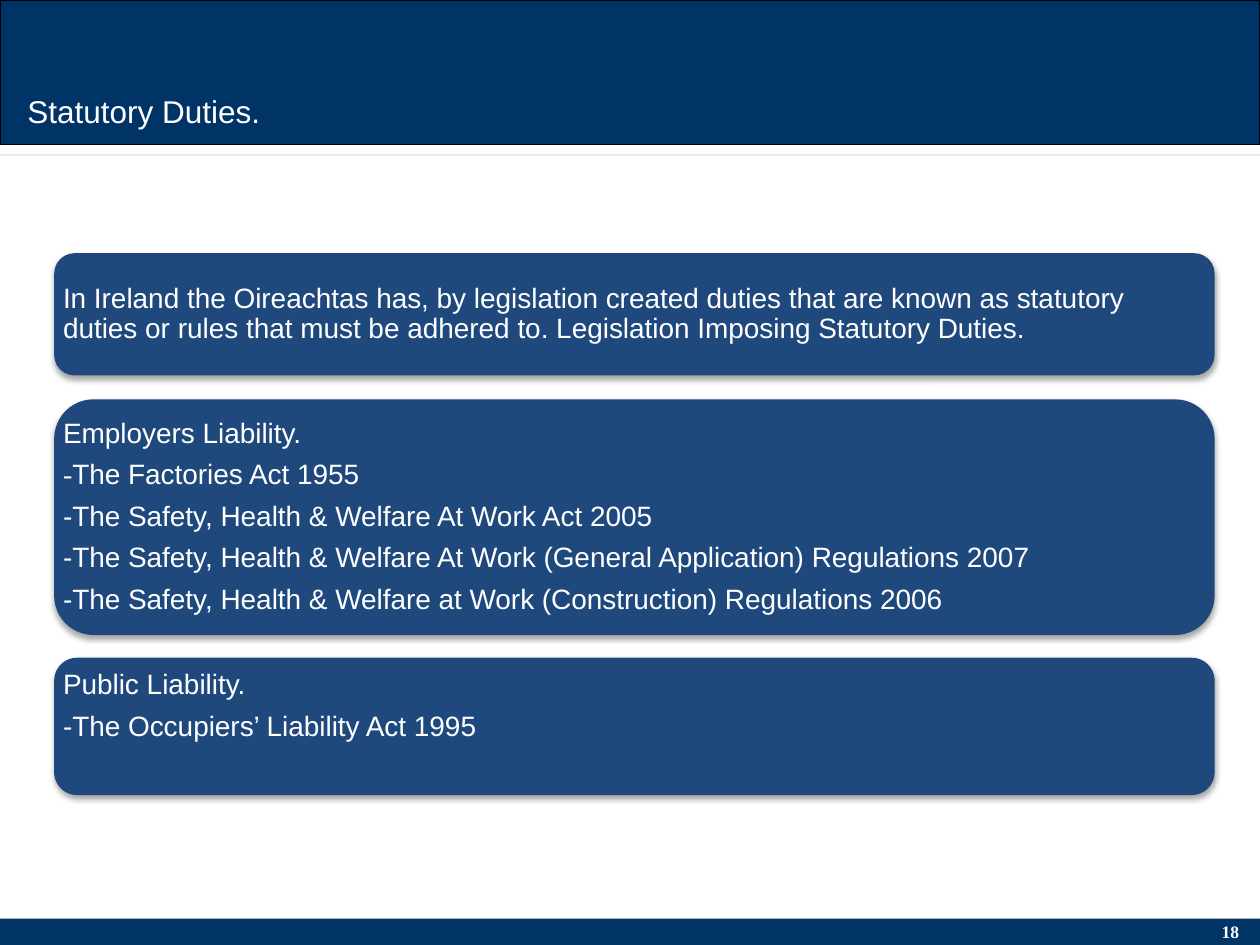
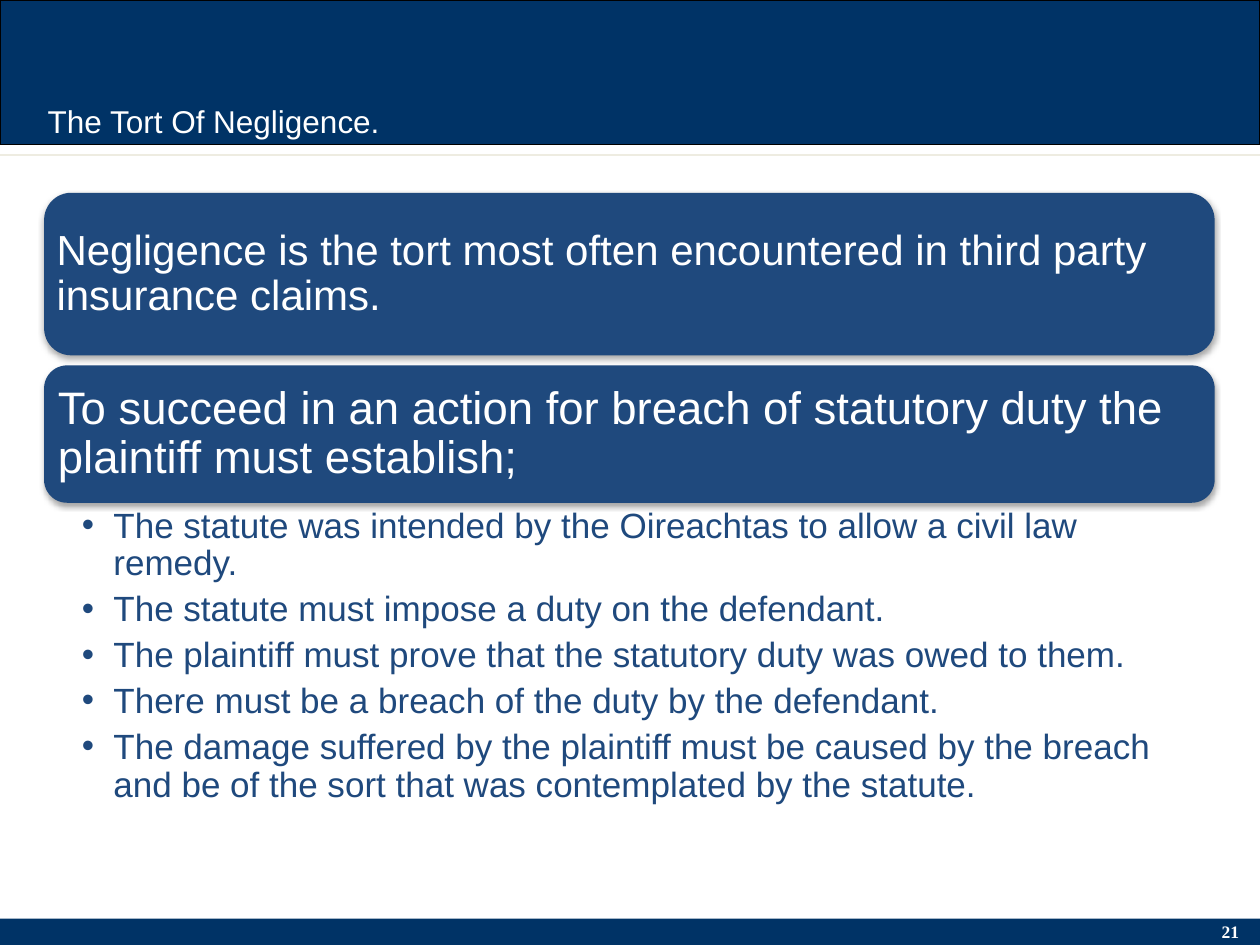
"""Build two slides on statutory duties and the tort of negligence."""
from dataclasses import dataclass

import pptx
import pptx.dml.color
import pptx.enum.shapes
import pptx.enum.text
import pptx.oxml.ns
import pptx.util
from lxml import etree

SLIDE_W, SLIDE_H = pptx.util.Inches(10), pptx.util.Inches(7.5)
COLS, ROWS = 100, 75
NAVY, BLUE, WHITE, BLACK, CREAM = "003366", "1F497D", "FFFFFF", "000000", "EEECE1"
SANS, SERIF = "Arial", "Times New Roman"
SHAPE = pptx.enum.shapes.MSO_SHAPE
ALIGN = pptx.enum.text.PP_ALIGN
ANCHOR = pptx.enum.text.MSO_ANCHOR
qn = pptx.oxml.ns.qn


@dataclass(frozen=True)
class Area:
    """A rectangle in grid columns and rows."""
    col: float
    row: float
    cols: float
    rows: float


@dataclass(frozen=True)
class Run:
    """A piece of text in one font."""
    text: str
    font: str = SANS


@dataclass(frozen=True)
class Style:
    """How the paragraphs of a text box look."""
    size: float
    color: str = WHITE
    bold: bool = False
    align: ALIGN = ALIGN.LEFT
    anchor: ANCHOR = ANCHOR.TOP
    spacing: float = 1.0
    after: float = 0
    indent: float = 0


@dataclass(frozen=True)
class Card:
    """A rounded panel with its text."""
    row: float
    rows: float
    size: float
    inset: float
    lines: tuple[tuple[Run, ...], ...]
    spare: float = 0


TITLE = Style(18)
NUMBER = Style(10, bold=True, align=ALIGN.CENTER)
POINTS = Style(20, BLUE, spacing=0.9, after=4.6, indent=2.5)


def x(cols: float) -> int:
    """Turn grid columns into a length."""
    return round(SLIDE_W * cols / COLS)


def y(rows: float) -> int:
    """Turn grid rows into a length."""
    return round(SLIDE_H * rows / ROWS)


def rgb(value: str) -> pptx.dml.color.RGBColor:
    """Turn a hex string into a colour."""
    return pptx.dml.color.RGBColor.from_string(value)


def place(area: Area) -> tuple[int, int, int, int]:
    """Give left, top, width and height of an area."""
    return x(area.col), y(area.row), x(area.cols), y(area.rows)


def lines(*texts: str) -> tuple[tuple[Run, ...], ...]:
    """Make one single-run line of each text."""
    return tuple((Run(text),) for text in texts)


def add_panel(s, kind: SHAPE, area: Area, fill: str, line: str | None = None):
    """Draw a filled shape without shadow."""
    sp = s.shapes.add_shape(kind, *place(area))
    sp.shadow.inherit = False
    sp.fill.solid()
    sp.fill.fore_color.rgb = rgb(fill)
    if line:
        sp.line.color.rgb = rgb(line)
        sp.line.width = pptx.util.Pt(0.75)
    else:
        sp.line.fill.background()
    return sp


def add_shadow(sp) -> None:
    """Give a shape a soft shadow straight below it."""
    effects = sp._element.spPr.find(qn("a:effectLst"))
    shadow = etree.SubElement(effects, qn("a:outerShdw"), blurRad="40000",
                              dist="23000", dir="5400000", rotWithShape="0")
    color = etree.SubElement(shadow, qn("a:srgbClr"), val=BLACK)
    etree.SubElement(color, qn("a:alpha"), val="35000")


def add_bullet(p, indent: float) -> None:
    """Give a paragraph a round bullet and a hanging indent."""
    pPr = p._p.get_or_add_pPr()
    pPr.set("marL", str(x(indent)))
    pPr.set("indent", str(-x(indent)))
    etree.SubElement(pPr, qn("a:buFont"), typeface=SANS)
    etree.SubElement(pPr, qn("a:buChar"), char="•")


def add_text(s, area: Area, paragraphs: tuple[tuple[Run, ...], ...], style: Style,
             insets: tuple[float, float, float, float] = (1, 0.5, 1, 0.5)) -> None:
    """Write paragraphs in a box, with left, top, right and bottom insets."""
    tf = s.shapes.add_textbox(*place(area)).text_frame
    tf.word_wrap = True
    tf.vertical_anchor = style.anchor
    left, top, right, bottom = insets
    tf.margin_left, tf.margin_right = x(left), x(right)
    tf.margin_top, tf.margin_bottom = y(top), y(bottom)
    for i, runs in enumerate(paragraphs):
        p = tf.add_paragraph() if i else tf.paragraphs[0]
        if style.indent:
            add_bullet(p, style.indent)
        p.alignment = style.align
        p.line_spacing = style.spacing
        p.space_after = pptx.util.Pt(style.after)
        for run in runs:
            r = p.add_run()
            r.text = run.text
            r.font.name = run.font
            r.font.size = pptx.util.Pt(style.size)
            r.font.bold = style.bold
            r.font.color.rgb = rgb(style.color)


def add_card(s, card: Card, col: float, cols: float) -> None:
    """Draw a shadowed card and its text."""
    area = Area(col, card.row, cols, card.rows)
    add_shadow(add_panel(s, SHAPE.ROUNDED_RECTANGLE, area, BLUE))
    style = Style(card.size, anchor=ANCHOR.MIDDLE, spacing=0.9, after=card.size * 0.4)
    insets = (card.inset, card.inset, card.inset, card.inset + card.spare)
    add_text(s, area, card.lines, style, insets)


def add_base(prs, number: str, title: str, title_area: Area):
    """Add a slide with its bands, rule, number and title."""
    s = prs.slides.add_slide(prs.slide_layouts[6])
    add_panel(s, SHAPE.RECTANGLE, Area(0, 0, COLS, 11.5), NAVY, BLACK)
    add_panel(s, SHAPE.RECTANGLE, Area(0, 72.9, COLS, 2.1), NAVY)
    rule = s.shapes.add_connector(pptx.enum.shapes.MSO_CONNECTOR.STRAIGHT,
                                  0, y(12.3), SLIDE_W, y(12.3))
    rule.line.color.rgb = rgb(CREAM)
    rule.line.width = pptx.util.Pt(1.5)
    etree.SubElement(rule._element.spPr, qn("a:effectLst"))
    add_text(s, Area(95.7, 72.6, 3.9, 2.7), ((Run(number, SERIF),),), NUMBER)
    add_text(s, title_area, lines(title), TITLE)
    return s


def add_statutory_duties(prs) -> None:
    """Build the slide on statutory duties."""
    s = add_base(prs, "18", "Statutory Duties.", Area(1.2, 6.8, 45.7, 4))
    cards = (
        Card(20.1, 9.7, 16, 0.7, lines(
            "In Ireland the Oireachtas has, by legislation created duties that are known "
            "as statutory duties or rules that must be adhered to. Legislation Imposing "
            "Statutory Duties.")),
        Card(31.7, 18.7, 16, 0.7, (
            (Run("Employers Liability."),),
            (Run("-", SERIF), Run("The Factories Act 1955")),
            *lines("-The Safety, Health & Welfare At Work Act 2005",
                   "-The Safety, Health & Welfare At Work (General Application) "
                   "Regulations 2007",
                   "-The Safety, Health & Welfare at Work (Construction) "
                   "Regulations 2006"))),
        Card(52.2, 10.9, 16, 0.7, lines(
            "Public Liability.", "-The Occupiers’ Liability Act 1995"), spare=3.2),
    )
    for card in cards:
        add_card(s, card, 4.3, 92.1)


def add_negligence(prs) -> None:
    """Build the slide on the tort of negligence."""
    s = add_base(prs, "21", "The Tort Of Negligence.", Area(2.8, 7.6, 37.8, 4))
    cards = (
        Card(15.3, 12.9, 24, 1, lines(
            "Negligence is the tort most often encountered in third party "
            "insurance claims.")),
        Card(29, 10.9, 26, 1.1, lines(
            "To succeed in an action for breach of statutory duty the plaintiff "
            "must establish;")),
    )
    for card in cards:
        add_card(s, card, 3.5, 92.9)
    add_text(s, Area(3.5, 39.9, 92.9, 23.5), lines(
        "The statute was intended by the Oireachtas to allow a civil law remedy.",
        "The statute must impose a duty on the defendant.",
        "The plaintiff must prove that the statutory duty was owed to them.",
        "There must be a breach of the duty by the defendant.",
        "The damage suffered by the plaintiff must be caused by the breach and be of "
        "the sort that was contemplated by the statute."), POINTS, (3, 0.4, 2, 0.4))


def main() -> None:
    """Build and save the presentation."""
    prs = pptx.Presentation()
    prs.slide_width, prs.slide_height = SLIDE_W, SLIDE_H
    add_statutory_duties(prs)
    add_negligence(prs)
    prs.save("out.pptx")


if __name__ == "__main__":
    main()
